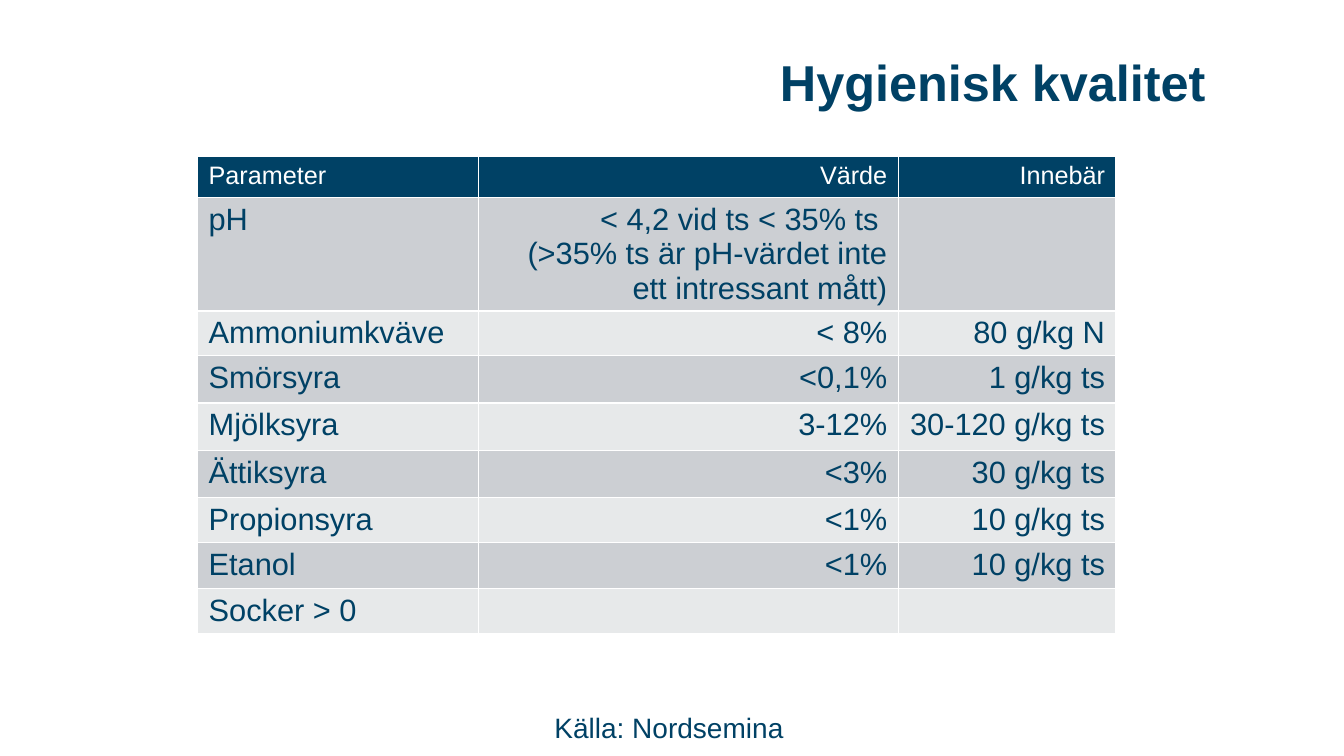
import pptx
import pptx.util
import pptx.dml.color
import pptx.enum.text
from lxml import etree
from pptx.oxml.ns import qn

Inches, Pt = pptx.util.Inches, pptx.util.Pt
ALIGN = pptx.enum.text.PP_ALIGN
ANCHOR = pptx.enum.text.MSO_ANCHOR

# Content
TITLE = "Hygienisk kvalitet"
SOURCE = "Källa: Nordsemina"
ROWS = [
    ("Parameter", "Värde", "Innebär"),
    ("pH", "< 4,2 vid ts < 35% ts \n(>35% ts är pH-värdet inte ett intressant mått)", ""),
    ("Ammoniumkväve", "< 8%", "80 g/kg N"),
    ("Smörsyra", "<0,1%", "1 g/kg ts"),
    ("Mjölksyra", "3-12%", "30-120 g/kg ts"),
    ("Ättiksyra", "<3%", "30 g/kg ts"),
    ("Propionsyra", "<1%", "10 g/kg ts"),
    ("Etanol", "<1%", "10 g/kg ts"),
    ("Socker > 0", "", ""),
]
COLUMN_WIDTHS = [2.79, 4.16, 2.16]
ROW_HEIGHTS = [0.41, 1, 0.43, 0.47, 0.47, 0.47, 0.41, 0.46, 0.39]
COLORS = {"navy": "004165", "white": "FFFFFF", "dark band": "CCCFD3", "light band": "E7E9EA"}


def rgb(name):
    return pptx.dml.color.RGBColor.from_string(COLORS[name])


def format_paragraph(paragraph, size, color, alignment=ALIGN.LEFT, bold=False):
    paragraph.alignment = alignment
    paragraph.font.name = "Arial"
    paragraph.font.size = Pt(size)
    paragraph.font.bold = bold
    paragraph.font.color.rgb = rgb(color)


def add_borders(cell):
    properties = cell._tc.get_or_add_tcPr()
    for side in ("lnL", "lnR", "lnT", "lnB"):
        line = etree.SubElement(properties, qn(f"a:{side}"), w=str(Pt(1)))
        fill = etree.SubElement(line, qn("a:solidFill"))
        etree.SubElement(fill, qn("a:srgbClr"), val=COLORS["white"])


presentation = pptx.Presentation()
presentation.slide_width, presentation.slide_height = Inches(13.33), Inches(7.5)
slide = presentation.slides.add_slide(presentation.slide_layouts[5])

# Title
title = slide.shapes.title
title.left, title.top, title.width, title.height = map(Inches, (1.66, 0.33, 10.4, 1.04))
title.text_frame.text = TITLE
title.text_frame.vertical_anchor = ANCHOR.MIDDLE
title.text_frame.paragraphs[0].line_spacing = 0.9
format_paragraph(title.text_frame.paragraphs[0], 36, "navy", ALIGN.RIGHT, bold=True)

# Table
table = slide.shapes.add_table(
    len(ROWS), len(COLUMN_WIDTHS), Inches(1.96), Inches(1.55),
    Inches(sum(COLUMN_WIDTHS)), Inches(sum(ROW_HEIGHTS))).table
table.horz_banding = False
for column, width in zip(table.columns, COLUMN_WIDTHS):
    column.width = Inches(width)
for row, height in zip(table.rows, ROW_HEIGHTS):
    row.height = Inches(height)

for row_index, values in enumerate(ROWS):
    if row_index == 0:
        band, size, color = "navy", 18, "white"
    else:
        band = "dark band" if row_index % 2 else "light band"
        size, color = 22, "navy"
    for column_index, value in enumerate(values):
        cell = table.cell(row_index, column_index)
        cell.margin_left = cell.margin_right = Inches(0.11)
        cell.margin_top = cell.margin_bottom = Inches(0.05)
        add_borders(cell)
        cell.fill.solid()
        cell.fill.fore_color.rgb = rgb(band)
        cell.text_frame.text = value
        for paragraph in cell.text_frame.paragraphs:
            format_paragraph(paragraph, size, color, ALIGN.RIGHT if column_index else ALIGN.LEFT)

# Source line
source_box = slide.shapes.add_textbox(Inches(5.4), Inches(7), Inches(2.53), Inches(0.44))
source_box.text_frame.word_wrap = False
source_box.text_frame.auto_size = pptx.enum.text.MSO_AUTO_SIZE.SHAPE_TO_FIT_TEXT
source_box.text_frame.text = SOURCE
format_paragraph(source_box.text_frame.paragraphs[0], 20, "navy")

presentation.save("out.pptx")
